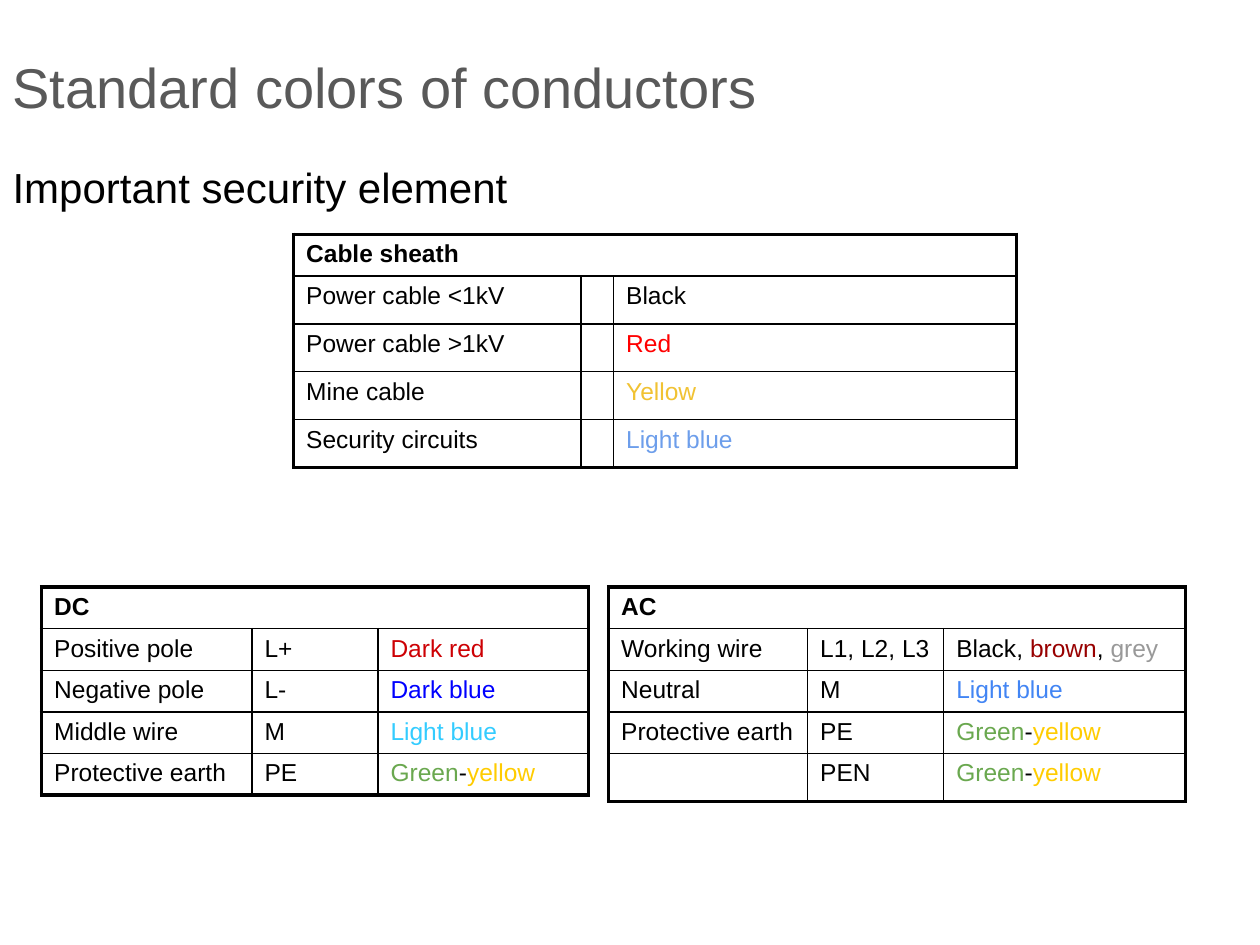
from lxml import etree
from pptx import Presentation
from pptx.dml.color import RGBColor
from pptx.enum.text import MSO_ANCHOR, MSO_AUTO_SIZE, PP_ALIGN
from pptx.oxml.ns import qn
from pptx.util import Inches, Pt

FONT = "Arial"
COLOURS = {
    "title": "595959", "black": "000000", "red": "FF0000", "dark red": "CD0004",
    "brown": "980000", "grey": "999999", "amber": "F1C232", "yellow": "FFCC00",
    "green": "6AA84F", "dark blue": "0000FF", "sky blue": "33CCFF",
    "azure": "4285F4", "pale blue": "6D9EEB",
}
TITLE = "Standard colors of conductors"
SUBTITLE = "Important security element"

# A cell is a list of (wording, colour) pieces; plain strings are black.
GREEN_YELLOW = [("Green", "green"), ("-", "black"), ("yellow", "yellow")]
BLACK_BROWN_GREY = [("Black, ", "black"), ("brown", "brown"),
                    (", ", "black"), ("grey", "grey")]
TABLES = [
    {"heading": "DC", "left": 0.33, "top": 4.66, "columns": [1.67, 1, 1.67],
     "rows": [
         ["Positive pole", "L+", [("Dark red", "dark red")]],
         ["Negative pole", "L-", [("Dark blue", "dark blue")]],
         ["Middle wire", "M", [("Light blue", "sky blue")]],
         ["Protective earth", "PE", GREEN_YELLOW]]},
    {"heading": "AC", "left": 4.83, "top": 4.66, "columns": [1.58, 1.08, 1.92],
     "rows": [
         ["Working wire", "L1, L2, L3", BLACK_BROWN_GREY],
         ["Neutral", "M", [("Light blue", "azure")]],
         ["Protective earth", "PE", GREEN_YELLOW],
         ["", "PEN", GREEN_YELLOW]]},
    {"heading": "Cable sheath", "left": 2.33, "top": 1.86, "columns": [2.28, 0.26, 3.2],
     "rows": [
         ["Power cable <1kV", "", "Black"],
         ["Power cable >1kV", "", [("Red", "red")]],
         ["Mine cable", "", [("Yellow", "amber")]],
         ["Security circuits", "", [("Light blue", "pale blue")]]]},
]
ROW_HEIGHT, ROW_HEIGHT_WITH_BLANK = 0.33, 0.38
OUTER_LINE, INNER_LINE = 2.25, 1


def write(paragraph, pieces, size, bold=False):
    if isinstance(pieces, str):
        pieces = [(pieces, "black")] if pieces else []
    paragraph.font.name = FONT
    paragraph.font.size = Pt(size)
    paragraph.font.bold = bold
    for wording, colour in pieces:
        run = paragraph.add_run()
        run.text = wording
        run.font.color.rgb = RGBColor.from_string(COLOURS[colour])


def set_borders(cell, widths):
    """Draw black cell edges; widths maps L, R, T, B to points."""
    properties = cell._tc.get_or_add_tcPr()
    for position, (edge, width) in enumerate(widths.items()):
        line = etree.Element(qn(f"a:ln{edge}"), w=str(Pt(width)))
        fill = etree.SubElement(line, qn("a:solidFill"))
        etree.SubElement(fill, qn("a:srgbClr"), val=COLOURS["black"])
        properties.insert(position, line)


def add_conductor_table(slide, content):
    columns = content["columns"]
    rows = [[content["heading"], "", ""]] + content["rows"]
    heights = [ROW_HEIGHT] + [ROW_HEIGHT_WITH_BLANK if "" in row else ROW_HEIGHT
                              for row in content["rows"]]
    table = slide.shapes.add_table(
        len(rows), len(columns), Inches(content["left"]), Inches(content["top"]),
        Inches(sum(columns)), Inches(sum(heights))).table
    table.first_row = table.horz_banding = False
    for column, width in zip(table.columns, columns):
        column.width = Inches(width)
    last_row, last_column = len(rows) - 1, len(columns) - 1
    for r, row in enumerate(rows):
        table.rows[r].height = Inches(heights[r])
        for c, pieces in enumerate(row):
            cell = table.cell(r, c)
            cell.fill.background()
            write(cell.text_frame.paragraphs[0], pieces, 14, bold=r == 0)
            on_outside = {"L": c == 0, "R": c == last_column or r == 0,
                          "T": r == 0, "B": r == last_row}
            set_borders(cell, {edge: OUTER_LINE if outside else INNER_LINE
                               for edge, outside in on_outside.items()})
    table.cell(0, 0).merge(table.cell(0, last_column))


def fill_placeholder(placeholder, top, height, pieces, size, anchor):
    placeholder.left, placeholder.top = Inches(0), Inches(top)
    placeholder.width, placeholder.height = Inches(10), Inches(height)
    frame = placeholder.text_frame
    frame.auto_size = MSO_AUTO_SIZE.NONE
    frame.vertical_anchor = anchor
    paragraph = frame.paragraphs[0]
    paragraph.alignment = PP_ALIGN.LEFT
    write(paragraph, pieces, size)
    return paragraph


prs = Presentation()
prs.slide_width, prs.slide_height = Inches(10), Inches(7.5)
slide = prs.slides.add_slide(prs.slide_layouts[1])

fill_placeholder(slide.shapes.title, 0.3, 0.77, [(TITLE, "title")], 32, MSO_ANCHOR.MIDDLE)
subtitle = fill_placeholder(slide.placeholders[1], 1.23, 2.14, SUBTITLE, 24, MSO_ANCHOR.TOP)
subtitle.space_before = Pt(3)
subtitle_properties = subtitle._p.get_or_add_pPr()
subtitle_properties.set("marL", "0")
subtitle_properties.set("indent", "0")
bullet_off = etree.Element(qn("a:buNone"))
subtitle_properties.find(qn("a:defRPr")).addprevious(bullet_off)

for content in TABLES:
    add_conductor_table(slide, content)

prs.save("out.pptx")
